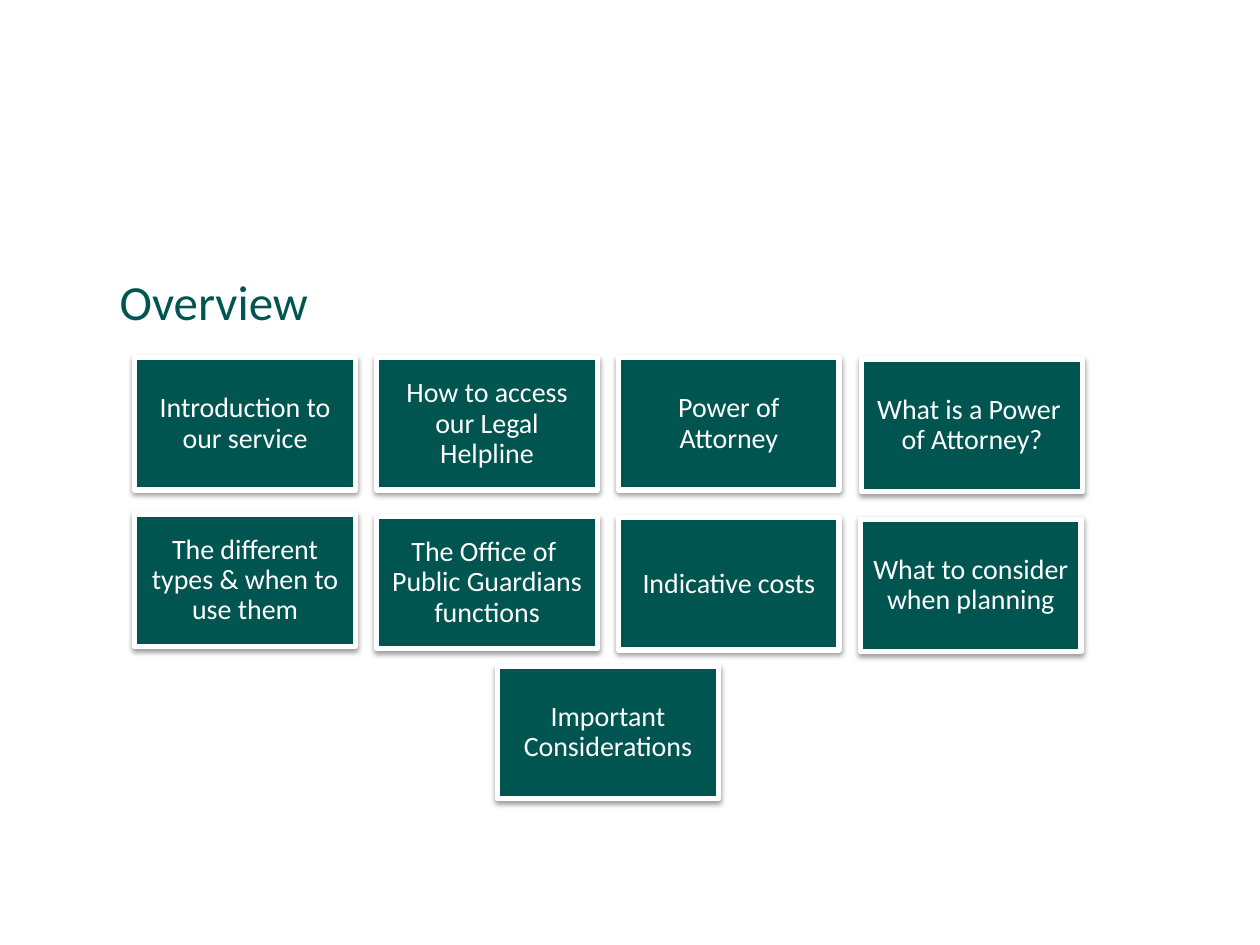
from pptx import Presentation
from pptx.dml.color import RGBColor
from pptx.enum.shapes import MSO_SHAPE
from pptx.enum.text import MSO_ANCHOR, PP_ALIGN
from pptx.oxml import parse_xml
from pptx.oxml.ns import nsdecls
from pptx.util import Inches, Pt

RECT = MSO_SHAPE.RECTANGLE
MIDDLE = MSO_ANCHOR.MIDDLE
LEFT, CENTER = PP_ALIGN.LEFT, PP_ALIGN.CENTER

COLORS = {"green": "005551", "white": "FFFFFF", "shadow": "000000"}
FONT = "Calibri"

# Card grid, in inches
GRID_LEFT, COL_STEP = 1.07, 1.92
CARD_W, CARD_H = 1.75, 1.05
INSET = 0.07

# Each card: text, column, top (rows drift slightly downwards), left nudge
CARDS = [
    ("Introduction to our service", 0, 2.84, 0),
    ("How to access our Legal Helpline", 1, 2.84, 0),
    ("Power of Attorney", 2, 2.84, 0),
    ("What is a Power \nof Attorney?", 3, 2.85, 0.01),
    ("The different types & when to use them", 0, 4.08, 0),
    ("The Office of \nPublic Guardians functions", 1, 4.10, 0),
    ("Indicative costs", 2, 4.11, 0),
    ("What to consider when planning", 3, 4.12, 0),
    ("Important Considerations", 1.5, 5.29, 0),
]


def rgb(name):
    return RGBColor.from_string(COLORS[name])


def set_text(tf, text, size, color, align=LEFT, spacing=None):
    tf.word_wrap = True
    tf.vertical_anchor = MIDDLE
    p = tf.paragraphs[0]
    p.text = text
    p.alignment = align
    p.line_spacing = spacing
    for r in p.runs:
        r.font.name = FONT
        r.font.size = Pt(size)
        r.font.color.rgb = rgb(color)


def add_shadow(sp):
    """Soft shadow falling straight down."""
    sp._element.spPr.append(parse_xml(
        f'<a:effectLst {nsdecls("a")}>'
        '<a:outerShdw blurRad="40000" dist="20000" dir="5400000" rotWithShape="0">'
        f'<a:srgbClr val="{COLORS["shadow"]}"><a:alpha val="38000"/></a:srgbClr>'
        '</a:outerShdw></a:effectLst>'))


def add_title(s, text):
    title = s.shapes.title
    title.left, title.top = Inches(0.85), Inches(1.76)
    title.width, title.height = Inches(8.12), Inches(1.25)
    set_text(title.text_frame, text, 28, "green")


def add_card(s, text, col, top, nudge):
    left = GRID_LEFT + col * COL_STEP + nudge
    sp = s.shapes.add_shape(RECT, Inches(left), Inches(top),
                            Inches(CARD_W), Inches(CARD_H))
    sp.fill.solid()
    sp.fill.fore_color.rgb = rgb("green")
    sp.line.color.rgb = rgb("white")
    sp.line.width = Pt(3)
    add_shadow(sp)
    tf = sp.text_frame
    tf.margin_left = tf.margin_right = Inches(INSET)
    tf.margin_top = tf.margin_bottom = Inches(INSET)
    set_text(tf, text, 16, "white", align=CENTER, spacing=0.9)


def main():
    prs = Presentation()
    prs.slide_width, prs.slide_height = Inches(10), Inches(7.5)
    s = prs.slides.add_slide(prs.slide_layouts[5])  # title only

    # Cards, then the heading above them
    for card in CARDS:
        add_card(s, *card)
    add_title(s, "Overview")

    prs.save("out.pptx")


if __name__ == "__main__":
    main()
